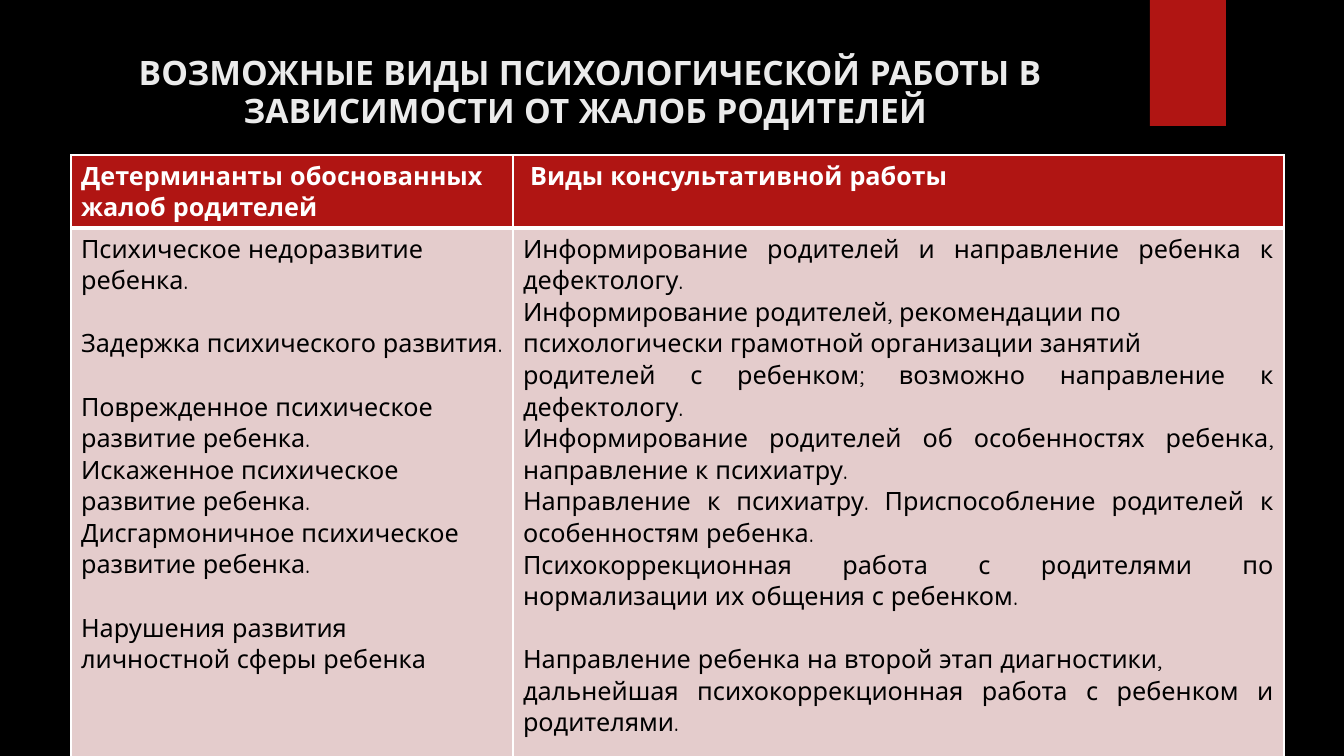
from lxml.etree import SubElement
from pptx import Presentation
from pptx.dml.color import RGBColor
from pptx.enum.shapes import MSO_SHAPE
from pptx.enum.text import PP_ALIGN
from pptx.oxml.ns import qn
from pptx.util import Pt

PX = 914400 / 100.8
FONT = "Quicksand"
BLACK = RGBColor(0x00, 0x00, 0x00)
WHITE = RGBColor(0xFF, 0xFF, 0xFF)
TITLE = RGBColor(0xEB, 0xEB, 0xEB)
RED = RGBColor(0xB0, 0x15, 0x13)
PINK = RGBColor(0xE4, 0xCC, 0xCC)
BLANK_LINE = Pt(22.5)

HEADERS = ["Детерминанты обоснованных жалоб родителей", " Виды консультативной работы"]
# Each entry: text, whether a gap comes before it
COMPLAINTS = [
    ("Психическое недоразвитие ребенка.", False),
    ("Задержка психического развития.", True),
    ("Поврежденное психическое развитие ребенка.", True),
    ("Искаженное психическое развитие ребенка.", False),
    ("Дисгармоничное психическое развитие ребенка.", False),
    ("Нарушения развития личностной сферы ребенка", True),
]
CONSULTING = [
    ("Информирование родителей и направление ребенка к дефектологу.", False),
    ("Информирование родителей, рекомендации по ", False),
    ("психологически грамотной организации занятий ", False),
    ("родителей с ребенком; возможно направление к дефектологу.", False),
    ("Информирование родителей об особенностях ребенка, направление к психиатру.", False),
    ("Направление к психиатру. Приспособление родителей к особенностям ребенка. ", False),
    ("Психокоррекционная работа с родителями по нормализации их общения с ребенком. ", False),
    ("Направление ребенка на второй этап диагностики, ", True),
    ("дальнейшая психокоррекционная работа с ребенком и родителями. ", False),
]


def px(n):
    return round(n * PX)


def fill_cell(cell, entries, fill, color, bold, align, borders):
    """Write paragraphs into a cell; borders maps a side tag to a width in points."""
    tcPr = cell._tc.get_or_add_tcPr()
    for side, width in borders.items():
        ln = SubElement(tcPr, qn(f"a:{side}"), w=str(Pt(width)))
        solid = SubElement(ln, qn("a:solidFill"))
        SubElement(solid, qn("a:srgbClr"), val=str(WHITE))
    cell.fill.solid()
    cell.fill.fore_color.rgb = fill
    tf = cell.text_frame
    tf.text = "\n".join(text for text, _ in entries)
    for p, (_, gap) in zip(tf.paragraphs, entries):
        p.alignment = align
        if gap:
            p.space_before = BLANK_LINE
        font = p.runs[0].font
        font.name, font.size, font.bold = FONT, Pt(18), bold
        font.color.rgb = color


prs = Presentation()
prs.slide_width, prs.slide_height = px(1344), px(756)
s = prs.slides.add_slide(prs.slide_layouts[6])
s.background.fill.solid()
s.background.fill.fore_color.rgb = BLACK

ribbon = s.shapes.add_shape(MSO_SHAPE.RECTANGLE, px(1150), 0, px(76), px(126))
ribbon.shadow.inherit = False
ribbon.fill.solid()
ribbon.fill.fore_color.rgb = RED
ribbon.line.fill.background()

title = s.shapes.add_textbox(px(71), px(50), px(1038), px(154))
tf = title.text_frame
tf.word_wrap = True
tf.text = "ВОЗМОЖНЫЕ ВИДЫ ПСИХОЛОГИЧЕСКОЙ РАБОТЫ В ЗАВИСИМОСТИ ОТ ЖАЛОБ РОДИТЕЛЕЙ "
p = tf.paragraphs[0]
p.alignment = PP_ALIGN.CENTER
p.line_spacing = 0.95
font = p.runs[0].font
font.name, font.size, font.bold = FONT, Pt(24), True
font.color.rgb = TITLE

table = s.shapes.add_table(2, 2, px(71), px(155), px(1213), px(603)).table
for column, width in zip(table.columns, (442, 771)):
    column.width = px(width)
for row, height in zip(table.rows, (73, 530)):
    row.height = px(height)

header_borders = {"lnL": 1, "lnR": 1, "lnT": 1, "lnB": 3}
body_borders = {"lnL": 1, "lnR": 1, "lnT": 3, "lnB": 1}
for i, header in enumerate(HEADERS):
    fill_cell(table.cell(0, i), [(header, False)], RED, WHITE, True, PP_ALIGN.LEFT, header_borders)
fill_cell(table.cell(1, 0), COMPLAINTS, PINK, BLACK, False, PP_ALIGN.LEFT, body_borders)
fill_cell(table.cell(1, 1), CONSULTING, PINK, BLACK, False, PP_ALIGN.JUSTIFY, body_borders)

prs.save("out.pptx")
